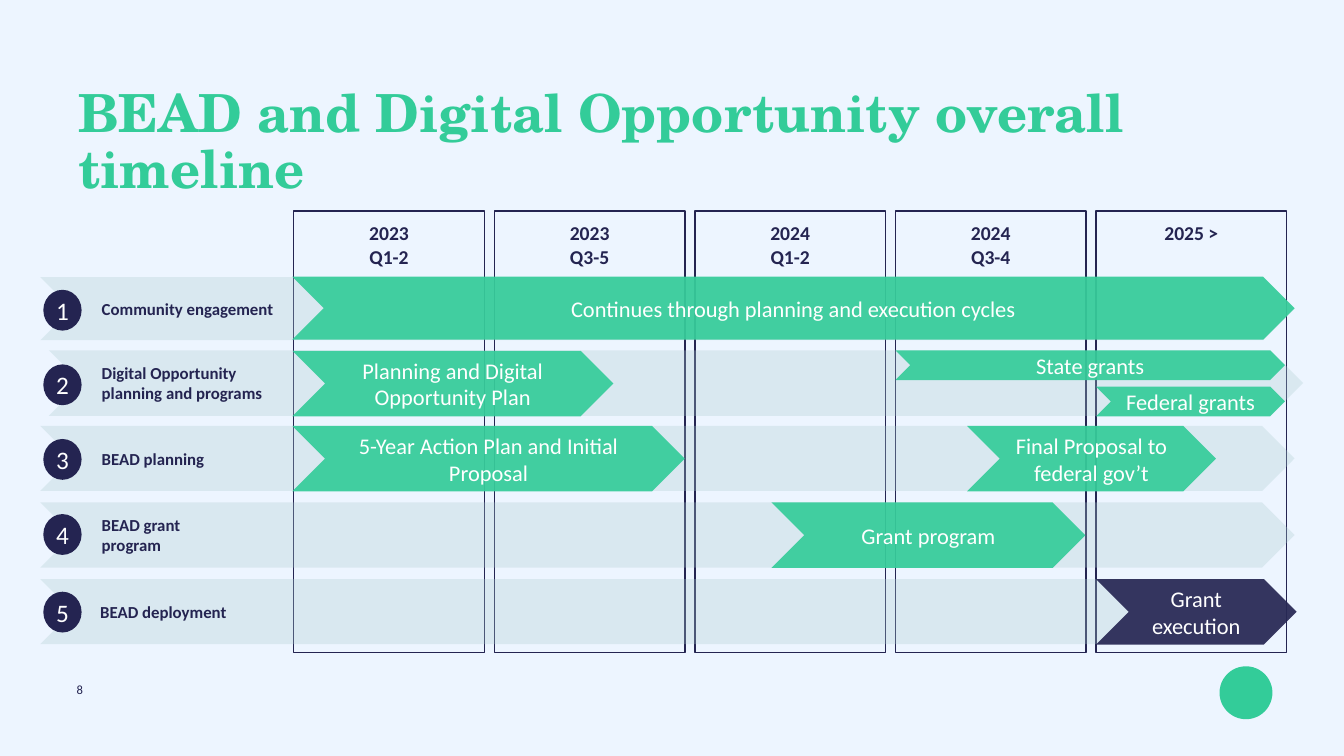
from lxml.etree import SubElement
from pptx import Presentation
from pptx.dml.color import RGBColor
from pptx.enum.shapes import MSO_SHAPE as SHAPE
from pptx.enum.text import MSO_ANCHOR as ANCHOR, PP_ALIGN as ALIGN
from pptx.oxml.ns import qn
from pptx.util import Pt

PX = 9144
NAVY = RGBColor(0x24, 0x24, 0x51)
GREEN = RGBColor(0x33, 0xCC, 0x99)
MIST = RGBColor(0xAB, 0xCD, 0xD0)
WHITE = RGBColor(0xFF, 0xFF, 0xFF)
SKY = RGBColor(0xED, 0xF5, 0xFF)

TITLE_FONT = dict(name="TeX Gyre Schola", size=Pt(75), bold=True)
HEAD_FONT = dict(name="Calibri", size=Pt(28), bold=True)
LABEL_FONT = dict(name="Calibri", size=Pt(24), bold=True)
BADGE_FONT = dict(name="Calibri", size=Pt(36), bold=False)
BAR_FONT = dict(name="Calibri", size=Pt(32), bold=False)
PAGE_FONT = dict(name="Calibri", size=Pt(18), bold=False)

COLUMN_LEFT, COLUMN_STEP = 583, 398
PERIODS = ["2023\vQ1-2", "2023\vQ3-5", "2024\vQ1-2", "2024\vQ3-4", "2025 >"]

# (lane left, top, height, badge top, label)
LANES = [
    (80, 550, 125, 575, "Community engagement"),
    (97, 695, 130, 723, "Digital Opportunity planning and programs"),
    (80, 845, 129, 871, "BEAD planning"),
    (80, 997, 129, 1020, "BEAD grant\nprogram"),
    (80, 1149, 129, 1174, "BEAD deployment"),
]
BARS = [
    (580, 549, 1989, 125, GREEN, "Continues through planning and execution cycles"),
    (580, 696, 637, 130, GREEN, "Planning and Digital Opportunity Plan"),
    (1777, 695, 773, 59, GREEN, "State grants"),
    (2175, 767, 375, 59, GREEN, "Federal grants"),
    (580, 845, 779, 130, GREEN, "5-Year Action Plan and Initial Proposal"),
    (1919, 845, 494, 130, GREEN, "Final Proposal to federal gov’t"),
    (1531, 997, 623, 130, GREEN, "Grant program"),
    (2175, 1149, 398, 130, NAVY, "Grant execution"),
]


def emu(*lengths):
    return [n * PX for n in lengths]


def write(sp, text, font, color, align=ALIGN.LEFT, anchor=ANCHOR.MIDDLE,
          inset=None, spacing=None):
    tf = sp.text_frame
    frame = dict(text=text, word_wrap=True, vertical_anchor=anchor)
    if inset is not None:
        sides = ("left", "top", "right", "bottom")
        frame.update({f"margin_{side}": inset * PX for side in sides})
    for key, value in frame.items():
        setattr(tf, key, value)
    for p in tf.paragraphs:
        p.alignment = align
        p.line_spacing = spacing
        for r in p.runs:
            for key, value in font.items():
                setattr(r.font, key, value)
            r.font.color.rgb = color


def add_shape(slide, kind, box, fill=None, alpha=None):
    sp = slide.shapes.add_shape(kind, *emu(*box))
    sp.shadow.inherit = False
    sp.line.fill.background()
    if fill is None:
        sp.fill.background()
    else:
        sp.fill.solid()
        sp.fill.fore_color.rgb = fill
    if alpha is not None:
        clr = sp.fill._xPr.find(qn("a:solidFill"))[0]
        SubElement(clr, qn("a:alpha")).set("val", str(alpha * 1000))
    return sp


def add_text(slide, box, text, font, **layout):
    sp = slide.shapes.add_textbox(*emu(*box))
    write(sp, text, font, NAVY, **layout)


def add_title(slide, text):
    sp = slide.shapes.title
    sp.left, sp.top, sp.width, sp.height = emu(145, 167, 2376, 125)
    write(sp, text, TITLE_FONT, GREEN, anchor=ANCHOR.TOP, spacing=0.9)


def add_period(slide, left, text):
    sp = add_shape(slide, SHAPE.RECTANGLE, (left, 419, 378, 876))
    sp.line.color.rgb = NAVY
    sp.line.width = Pt(2)
    write(sp, text, HEAD_FONT, NAVY, ALIGN.CENTER, ANCHOR.TOP, inset=20)


def add_lane(slide, number, left, top, height, badge_top, label):
    add_shape(slide, SHAPE.CHEVRON, (left, top, 2489, height), MIST, 30)
    label_left = 189 if number == len(LANES) else 192
    add_text(slide, (label_left, top, 377, height), label, LABEL_FONT)
    sp = add_shape(slide, SHAPE.OVAL, (86, badge_top, 76, 81), NAVY)
    write(sp, str(number), BADGE_FONT, WHITE, ALIGN.CENTER, inset=0)


def add_bar(slide, left, top, width, height, color, text):
    sp = add_shape(slide, SHAPE.CHEVRON, (left, top, width, height), color, 91)
    write(sp, text, BAR_FONT, WHITE, ALIGN.CENTER)


def main():
    prs = Presentation()
    prs.slide_width, prs.slide_height = emu(2667, 1500)
    slide = prs.slides.add_slide(prs.slide_layouts[5])
    slide.background.fill.solid()
    slide.background.fill.fore_color.rgb = SKY

    add_shape(slide, SHAPE.OVAL, (2420, 1322, 105, 105), GREEN)
    add_title(slide, "BEAD and Digital Opportunity overall timeline")
    for i, period in enumerate(PERIODS):
        add_period(slide, COLUMN_LEFT + i * COLUMN_STEP, period)
    for number, lane in enumerate(LANES, 1):
        add_lane(slide, number, *lane)
    for bar in BARS:
        add_bar(slide, *bar)
    add_text(slide, (142, 1352, 1918, 37), "8", PAGE_FONT,
             anchor=ANCHOR.TOP, spacing=0.9)
    prs.save("out.pptx")


if __name__ == "__main__":
    main()
